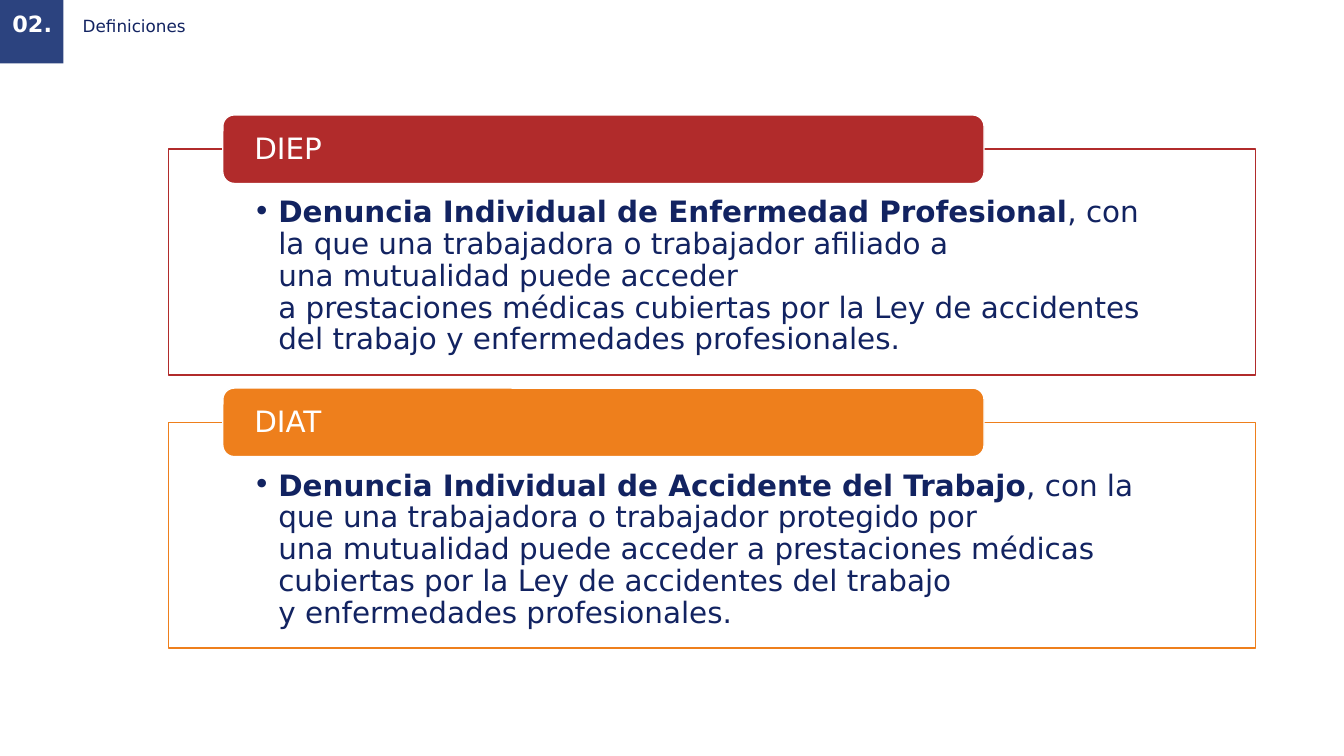
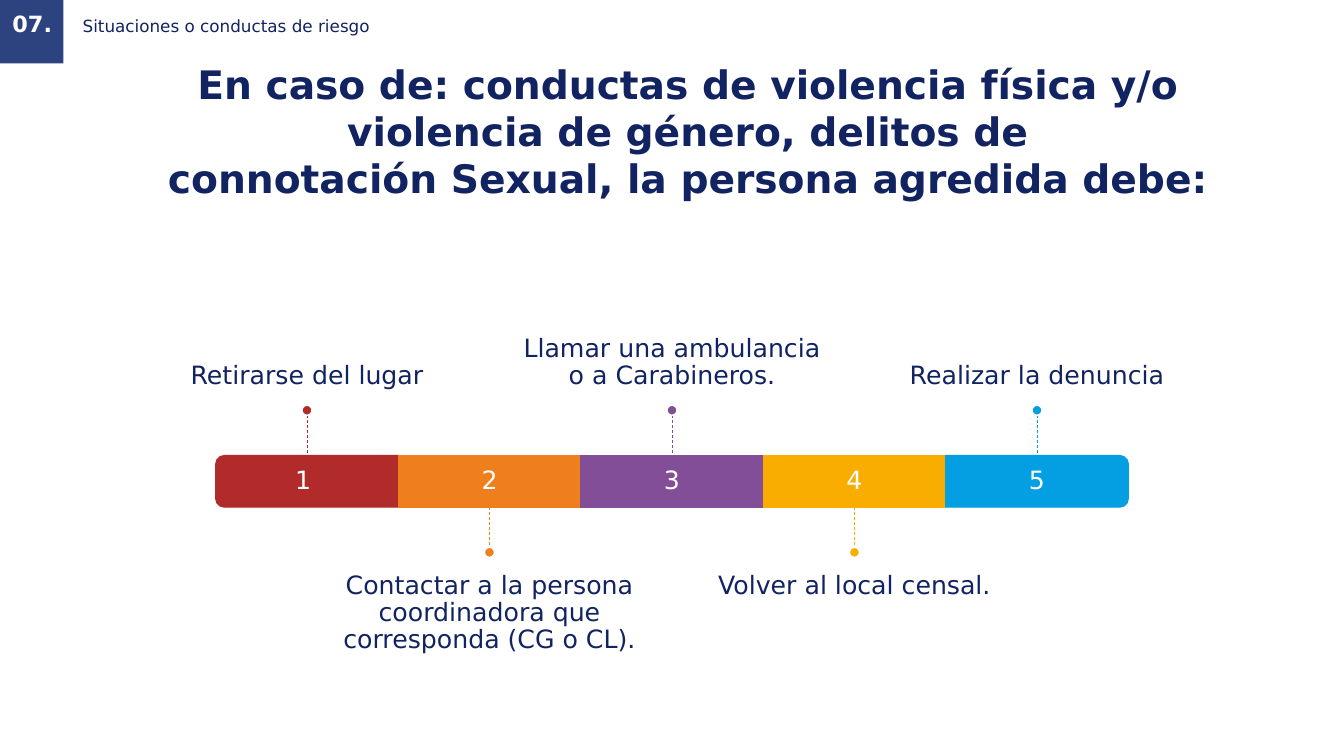
import dataclasses

import pptx
import pptx.dml.color
import pptx.enum.dml
import pptx.enum.shapes
import pptx.enum.text
import pptx.oxml.ns
import pptx.util
from lxml import etree

Inches = pptx.util.Inches
Pt = pptx.util.Pt
Kind = pptx.enum.shapes.MSO_SHAPE
Align = pptx.enum.text.PP_ALIGN
Anchor = pptx.enum.text.MSO_ANCHOR
qn = pptx.oxml.ns.qn

FONT = "DejaVu Sans"
TIE = "~"  # stands for a space that must not break
HUES = {
    "navy": "122361", "band": "2C437F", "white": "FFFFFF", "red": "B12B2B",
    "orange": "EE7F1C", "purple": "824E98", "yellow": "F9AD00", "blue": "049EE2",
}


@dataclasses.dataclass
class Panel:
    name: str
    hue: str
    lead: str
    rest: str


@dataclasses.dataclass
class Step:
    mark: str
    hue: str
    text: str


@dataclasses.dataclass
class Style:
    size: float
    hue: str = "navy"
    bold: bool = False
    align: Align = Align.LEFT
    anchor: Anchor = Anchor.MIDDLE
    pads: tuple = (0, 0, 0, 0)
    space: float = 0.9


HEAD = Style(12, pads=(0, 0.05, 0.1, 0.05))
BADGE = Style(16, "white", True, Align.CENTER, pads=(0, 0, 0, 0.13))
TAB = Style(21, "white", pads=(0.28, 0.02, 0.28, 0))
BODY = Style(21, anchor=Anchor.TOP, pads=(0.84, 0.48, 0.84, 0.16))
LEAD = Style(28, bold=True, align=Align.CENTER, pads=(0.1, 0.05, 0.1, 0.05), space=1)
MARK = Style(18, "white", align=Align.CENTER)
ABOVE = Style(18, align=Align.CENTER, anchor=Anchor.BOTTOM, pads=(0, 0, 0, 0.15))
BELOW = Style(18, align=Align.CENTER, anchor=Anchor.TOP, pads=(0, 0.15, 0, 0))

PANELS = [
    Panel("DIEP", "red", "Denuncia Individual de Enfermedad Profesional",
          ", con la~que una trabajadora o~trabajador afiliado a una~mutualidad puede "
          "acceder a~prestaciones~médicas~cubiertas por la Ley de~accidentes del "
          "trabajo y enfermedades~profesionales."),
    Panel("DIAT", "orange", "Denuncia Individual de Accidente del~Trabajo",
          ", con la que una~trabajadora~o~trabajador protegido por una~mutualidad "
          "puede acceder a~prestaciones~médicas cubiertas por la~Ley de accidentes "
          "del trabajo y~enfermedades~profesionales."),
]
STEPS = [
    Step("1~", "red", "Retirarse del lugar"),
    Step("2", "orange", "Contactar a la persona coordinadora que corresponda (CG o CL)."),
    Step("3", "purple", "Llamar una ambulancia o a Carabineros."),
    Step("4", "yellow", "Volver al local censal."),
    Step("5", "blue", "Realizar la denuncia"),
]


def rgb(hue: str) -> pptx.dml.color.RGBColor:
    return pptx.dml.color.RGBColor.from_string(HUES[hue])


def assign(item, values: dict) -> None:
    for name, value in values.items():
        setattr(item, name, value)


def write(shape, style: Style, text: str, rest: str = "") -> None:
    """Fill a shape with one paragraph; rest follows in regular weight."""
    frame = shape.text_frame
    sides = ("margin_left", "margin_top", "margin_right", "margin_bottom")
    assign(frame, dict(zip(sides, map(Inches, style.pads))))
    assign(frame, {"word_wrap": True, "vertical_anchor": style.anchor,
                   "auto_size": pptx.enum.text.MSO_AUTO_SIZE.NONE})
    para = frame.paragraphs[0]
    assign(para, {"alignment": style.align, "line_spacing": style.space,
                  "space_before": Pt(0)})
    for words, bold in ((text, style.bold or bool(rest)), (rest, False)):
        if words:
            run = para.add_run()
            run.text = words.replace(TIE, chr(160))
            assign(run.font, {"name": FONT, "size": Pt(style.size), "bold": bold})
            run.font.color.rgb = rgb(style.hue)


def bullet(shape) -> None:
    props = shape.text_frame.paragraphs[0]._p.get_or_add_pPr()
    props.set("marL", str(Inches(0.25)))
    props.set("indent", str(Inches(-0.25)))
    etree.SubElement(props, qn("a:buFont")).set("typeface", FONT)
    etree.SubElement(props, qn("a:buChar")).set("char", "•")


def block(slide, kind: Kind, box: tuple, fill: str, edge: str = ""):
    shape = slide.shapes.add_shape(kind, *map(Inches, box))
    shape.shadow.inherit = False
    shape.fill.solid()
    shape.fill.fore_color.rgb = rgb(fill)
    if edge:
        shape.line.color.rgb = rgb(edge)
        shape.line.width = Pt(1)
    else:
        shape.line.fill.background()
    return shape


def label(slide, box: tuple, style: Style, text: str) -> None:
    write(slide.shapes.add_textbox(*map(Inches, box)), style, text)


def stem(slide, x: float, top: float, end: float, hue: str) -> None:
    """Draw the dashed line that ties a step to its dot."""
    line = slide.shapes.add_connector(
        pptx.enum.shapes.MSO_CONNECTOR.STRAIGHT, *map(Inches, (x, top, x, end)))
    line.line.color.rgb = rgb(hue)
    assign(line.line, {"width": Pt(0.5),
                       "dash_style": pptx.enum.dml.MSO_LINE.DASH})
    etree.SubElement(line._element.spPr, qn("a:effectLst"))


def start(deck, mark: str, name: str):
    """Add a slide with its numbered badge and title."""
    slide = deck.slides.add_slide(deck.slide_layouts[5])
    badge = block(slide, Kind.RECTANGLE, (0, 0, 0.64, 0.63), "band")
    write(badge, BADGE, mark)
    block(slide, Kind.RECTANGLE, (0.63, 0, 0.1, 1.12), "white")
    title = slide.shapes.title
    assign(title, {"left": Inches(0.82), "top": Inches(0),
                   "width": Inches(11.91), "height": Inches(0.53)})
    write(title, HEAD, name)
    return slide


def terms(deck) -> None:
    slide = start(deck, "02.", "Definiciones")
    for i, panel in enumerate(PANELS):
        top = 1.48 + i * 2.71
        body = block(slide, Kind.RECTANGLE, (1.67, top, 10.78, 2.24), "white", panel.hue)
        write(body, BODY, panel.lead, panel.rest)
        bullet(body)
        tab = block(slide, Kind.ROUNDED_RECTANGLE, (2.21, top - 0.34, 7.55, 0.68),
                    panel.hue, "white")
        write(tab, TAB, panel.name)


def risks(deck) -> None:
    slide = start(deck, "07.", "Situaciones o conductas de riesgo")
    label(slide, (0.99, 0.54, 11.66, 1.51), LEAD,
          "En caso de: conductas de violencia física y/o violencia~de~género, "
          "delitos~de connotación~Sexual,~la~persona agredida debe:")
    left, top, wide, high = 2.14, 4.52, 1.81, 0.51
    reach, dot = 0.4, 0.1
    turns = {0: 270, len(STEPS) - 1: 90}
    for i, step in enumerate(STEPS):
        x = left + i * wide
        mid = x + wide / 2
        box = (x, top, wide, high)
        if i in turns:
            upright = (mid - high / 2, top + (high - wide) / 2, high, wide)
            cap = block(slide, Kind.ROUND_2_SAME_RECTANGLE, upright, step.hue, step.hue)
            cap.rotation = turns[i]
        else:
            block(slide, Kind.RECTANGLE, box, step.hue, step.hue)
        label(slide, box, MARK, step.mark)
        if i % 2 == 0:
            ends, spot = (top - reach, top), top - reach - dot
            note, style = 2.26, ABOVE
        else:
            ends, spot = (top + high, top + high + reach), top + high + reach
            note, style = 5.53, BELOW
        stem(slide, mid, *ends, step.hue)
        block(slide, Kind.OVAL, (mid - dot / 2, spot, dot, dot), step.hue, "white")
        label(slide, (mid - 1.51, note, 3.02, 1.76), style, step.text)


def main() -> None:
    deck = pptx.Presentation()
    assign(deck, {"slide_width": Inches(13.33), "slide_height": Inches(7.5)})
    terms(deck)
    risks(deck)
    deck.save("out.pptx")


if __name__ == "__main__":
    main()
